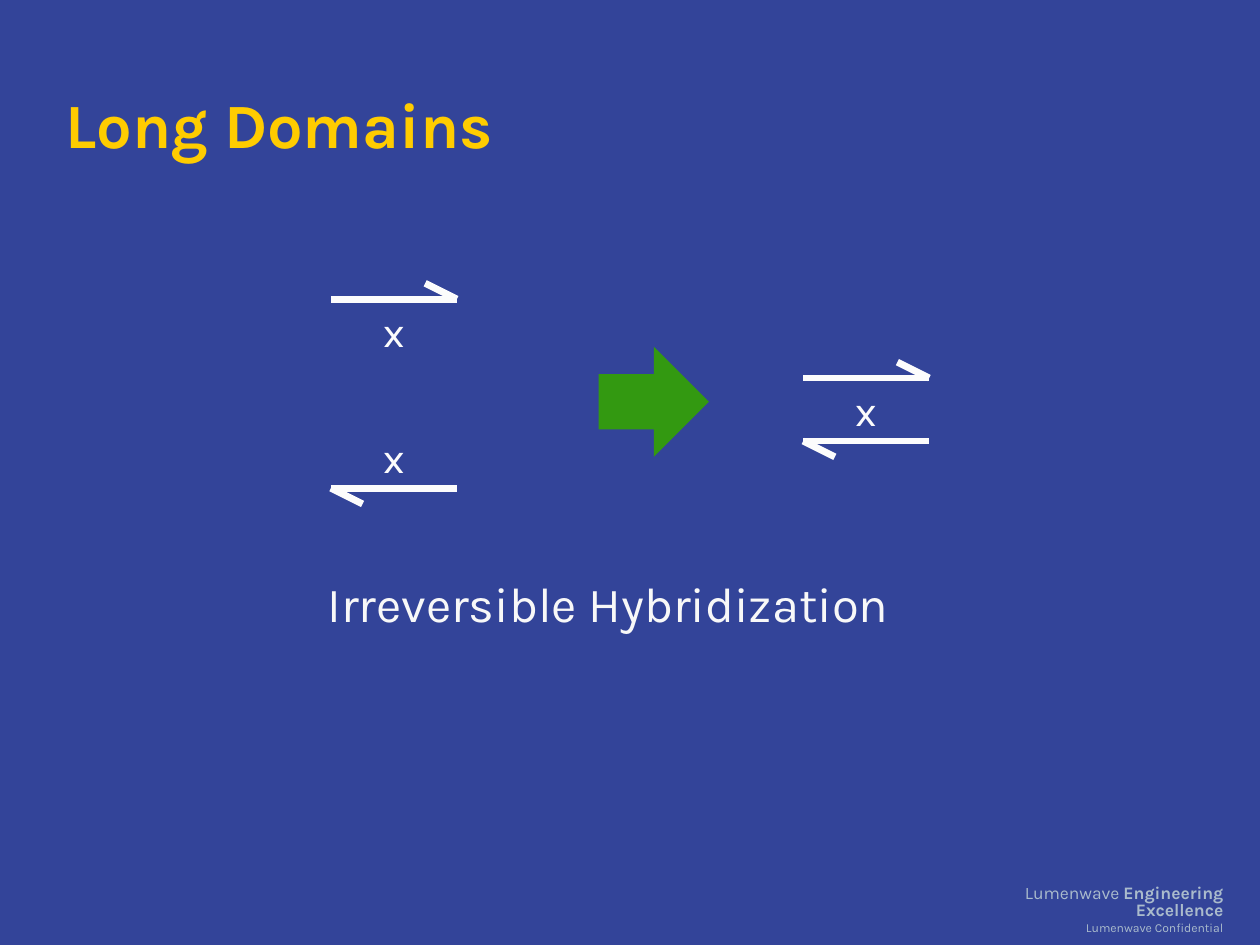
from lxml.etree import SubElement
from pptx import Presentation
from pptx.dml.color import RGBColor
from pptx.enum.shapes import MSO_CONNECTOR, MSO_SHAPE
from pptx.enum.text import MSO_ANCHOR, PP_ALIGN
from pptx.oxml.ns import qn
from pptx.util import Cm, Pt

THEME = {
    "font": "Karla",
    "background": RGBColor.from_string("334499"),
    "title": RGBColor.from_string("FFCC00"),
    "strand": RGBColor.from_string("FCFCFC"),
    "caption": RGBColor.from_string("F8F8F8"),
    "footer": RGBColor.from_string("AABBCC"),
    "reaction": RGBColor.from_string("339911"),
    "title_size": Pt(36),
    "caption_size": Pt(28),
    "domain_size": Pt(24),
    "footer_size": Pt(10),
    "notice_size": Pt(7),
    "strand_width": Pt(4),
}

presentation = Presentation()
presentation.slide_width, presentation.slide_height = Cm(25.4), Cm(19.05)
slide = presentation.slides.add_slide(presentation.slide_layouts[6])
slide.background.fill.solid()
slide.background.fill.fore_color.rgb = THEME["background"]


def add_text(box, lines, role, frame_format, paragraph_format):
    frame = slide.shapes.add_textbox(*map(Cm, box)).text_frame
    for name, value in frame_format.items():
        setattr(frame, name, value)
    for index, (size, runs) in enumerate(lines):
        paragraph = frame.add_paragraph() if index else frame.paragraphs[0]
        for name, value in paragraph_format.items():
            setattr(paragraph, name, value)
        for words, bold in runs:
            run = paragraph.add_run()
            run.text = words
            font_format = {"name": THEME["font"], "size": THEME[size], "bold": bold}
            for name, value in font_format.items():
                setattr(run.font, name, value)
            run.font.color.rgb = THEME[role]


def add_stroke(start, end):
    stroke = slide.shapes.add_connector(MSO_CONNECTOR.STRAIGHT, *map(Cm, start + end))
    stroke.line.color.rgb = THEME["strand"]
    stroke.line.width = THEME["strand_width"]
    SubElement(stroke._element.spPr, qn("a:effectLst"))


flush = {"margin_left": 0, "margin_right": 0, "margin_top": 0, "margin_bottom": 0,
         "word_wrap": True}

add_text((18.87, 17.86, 5.79, 0.66),
         [("footer_size", [("Lumenwave ", False), ("Engineering Excellence", True)]),
          ("notice_size", [("Lumenwave Confidential", False)])],
         "footer", flush,
         {"alignment": PP_ALIGN.RIGHT, "line_spacing": 0.8, "space_after": Pt(2)})
add_text((1.32, 0.99, 23.37, 3.18),
         [("title_size", [("Long Domains", True)])], "title",
         flush | {"vertical_anchor": MSO_ANCHOR.MIDDLE}, {"line_spacing": 0.9})

strand_length, barb_length, barb_height = 2.54, 0.64, 0.32
free_left, bound_left = 6.67, 16.19
free_top, free_bottom = 6.03, 9.84
bound_top, bound_bottom = 7.62, 8.89

for left, top, bottom in ((free_left, free_top, free_bottom),
                          (bound_left, bound_top, bound_bottom)):
    right = left + strand_length
    add_stroke((left, top), (right, top))
    add_stroke((right - barb_length, top - barb_height), (right, top))
    add_stroke((left, bottom), (right, bottom))
    add_stroke((left, bottom), (left + barb_length, bottom + barb_height))

label_height = 1.27
for left, top in ((free_left, free_top), (free_left, free_bottom - label_height),
                  (bound_left, bound_top)):
    add_text((left, top, strand_length, label_height),
             [("domain_size", [("x", False)])], "strand",
             {"word_wrap": True}, {"alignment": PP_ALIGN.CENTER})

reaction = slide.shapes.add_shape(
    MSO_SHAPE.RIGHT_ARROW, Cm(12.07), Cm(6.99), Cm(2.22), Cm(2.22))
reaction.shadow.inherit = False
reaction.fill.solid()
reaction.fill.fore_color.rgb = THEME["reaction"]
reaction.line.fill.background()

add_text((6.35, 11.43, 12.78, 1.45),
         [("caption_size", [("Irreversible Hybridization", False)])], "caption",
         {"word_wrap": False}, {"alignment": PP_ALIGN.LEFT})

presentation.save("out.pptx")
